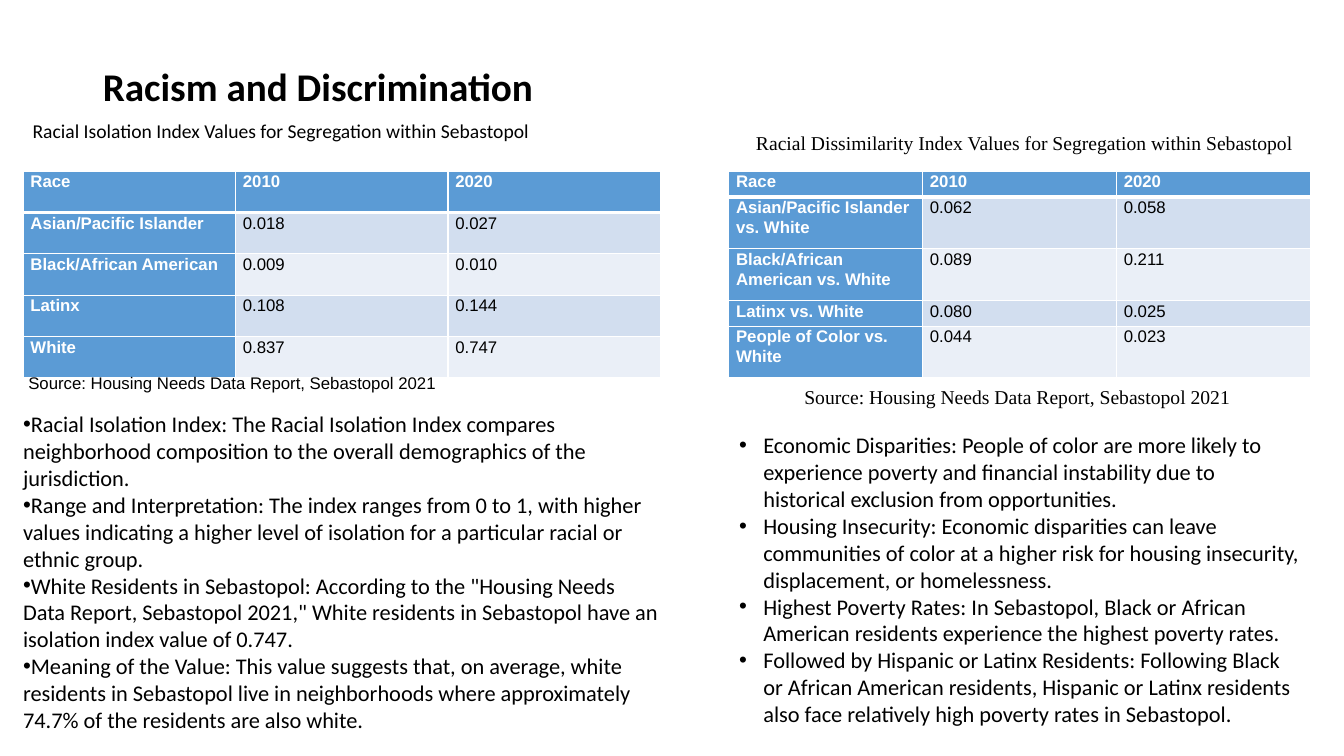
from dataclasses import dataclass

from lxml.etree import SubElement
from pptx import Presentation
from pptx.dml.color import RGBColor
from pptx.enum.text import MSO_ANCHOR as Anchor
from pptx.oxml.ns import qn
from pptx.util import Emu, Pt

EMU_PER_PX = 9525


def px(length):
    return Emu(round(length * EMU_PER_PX))


@dataclass(frozen=True)
class Theme:
    ink: str = "000000"
    paper: str = "FFFFFF"
    header: str = "5B9BD5"
    bands: tuple = ("D2DEEF", "EAEFF7")
    body_font: str = "Calibri"
    table_font: str = "Arial"
    serif_font: str = "Times New Roman"
    title_size: int = 28
    body_size: int = 16
    caption_size: int = 14
    table_size: int = 12


def write(paragraph, text, *, font, size, color, bold=False, line=None, after=0):
    paragraph.space_after = Pt(after)
    if line:
        paragraph.line_spacing = line
    run = paragraph.add_run()
    run.text = text
    run.font.name = font
    run.font.size = Pt(size)
    run.font.bold = bold
    run.font.color.rgb = RGBColor.from_string(color)


def add_bullet(paragraph, hang):
    properties = paragraph._p.get_or_add_pPr()
    properties.set("marL", str(px(hang)))
    properties.set("indent", str(-px(hang)))
    SubElement(properties, qn("a:buFont"), typeface="Arial")
    SubElement(properties, qn("a:buChar"), char="•")


def add_border(cell, side, width, color):
    properties = cell._tc.get_or_add_tcPr()
    border = SubElement(properties, qn(f"a:ln{side}"), w=str(Pt(width)))
    fill = SubElement(border, qn("a:solidFill"))
    SubElement(fill, qn("a:srgbClr"), val=color)


class SlideBuilder:
    def __init__(self, slide, theme):
        self.slide = slide
        self.theme = theme

    def frame(self, left, top, width, height, inset=(10, 5), wrap=True):
        """Add an empty text box and return its text frame."""
        box = self.slide.shapes.add_textbox(px(left), px(top), px(width), px(height))
        frame = box.text_frame
        frame.word_wrap = wrap
        frame.margin_left = frame.margin_right = px(inset[0])
        frame.margin_top = frame.margin_bottom = px(inset[1])
        return frame

    def label(self, text, place, inset=(10, 5), wrap=True, anchor=Anchor.TOP, **style):
        frame = self.frame(*place, inset=inset, wrap=wrap)
        frame.vertical_anchor = anchor
        write(frame.paragraphs[0], text, color=self.theme.ink, **style)

    def bullets(self, points, place, hang, inset=(10, 5)):
        frame = self.frame(*place, inset=inset)
        for index, point in enumerate(points):
            paragraph = frame.add_paragraph() if index else frame.paragraphs[0]
            write(paragraph, point, font=self.theme.body_font,
                  size=self.theme.body_size, color=self.theme.ink)
            add_bullet(paragraph, hang)

    def table(self, rows, place, row_shares, after=0):
        """Add a table whose row heights follow row_shares."""
        left, top, width, height = place
        table = self.slide.shapes.add_table(
            len(rows), len(rows[0]), px(left), px(top), px(width), px(height)).table
        for column in table.columns:
            column.width = px(width / len(rows[0]))
        for r, (values, share) in enumerate(zip(rows, row_shares)):
            table.rows[r].height = px(height * share / sum(row_shares))
            for c, value in enumerate(values):
                self.cell(table.cell(r, c), value, r, c, after)

    def cell(self, cell, value, row, column, after):
        theme = self.theme
        heading = row == 0 or column == 0
        cell.margin_left = cell.margin_right = px(7)
        cell.margin_top = cell.margin_bottom = 0
        for side in "LRTB":
            under_header = (row, side) in ((0, "B"), (1, "T"))
            add_border(cell, side, 3 if under_header else 1, theme.paper)
        cell.fill.solid()
        cell.fill.fore_color.rgb = RGBColor.from_string(
            theme.header if heading else theme.bands[(row - 1) % 2])
        write(cell.text_frame.paragraphs[0], value, font=theme.table_font,
              size=theme.table_size, color=theme.paper if heading else theme.ink,
              bold=heading, line=1.07, after=after)


HEADER = ("Race", "2010", "2020")
SOURCE = "Source: Housing Needs Data Report, Sebastopol 2021"
ISOLATION = (
    HEADER,
    ("Asian/Pacific Islander", "0.018", "0.027"),
    ("Black/African American", "0.009", "0.010"),
    ("Latinx", "0.108", "0.144"),
    ("White", "0.837", "0.747"),
)
DISSIMILARITY = (
    HEADER,
    ("Asian/Pacific Islander vs. White", "0.062", "0.058"),
    ("Black/African American vs. White", "0.089", "0.211"),
    ("Latinx vs. White", "0.080", "0.025"),
    ("People of Color vs. White", "0.044", "0.023"),
)
ISOLATION_POINTS = (
    "Racial Isolation Index: The Racial Isolation Index compares neighborhood "
    "composition to the overall demographics of the jurisdiction.",
    "Range and Interpretation: The index ranges from 0 to 1, with higher values "
    "indicating a higher level of isolation for a particular racial or ethnic group.",
    'White Residents in Sebastopol: According to the "Housing Needs Data Report, '
    'Sebastopol 2021," White residents in Sebastopol have an isolation index value '
    "of 0.747.",
    "Meaning of the Value: This value suggests that, on average, white residents in "
    "Sebastopol live in neighborhoods where approximately 74.7% of the residents are "
    "also white.",
)
DISPARITY_POINTS = (
    "Economic Disparities: People of color are more likely to experience poverty and "
    "financial instability due to historical exclusion from opportunities.",
    "Housing Insecurity: Economic disparities can leave communities of color at a "
    "higher risk for housing insecurity, displacement, or homelessness.",
    "Highest Poverty Rates: In Sebastopol, Black or African American residents "
    "experience the highest poverty rates.",
    "Followed by Hispanic or Latinx Residents: Following Black or African American "
    "residents, Hispanic or Latinx residents also face relatively high poverty rates "
    "in Sebastopol.",
)


def main():
    deck = Presentation()
    deck.slide_width, deck.slide_height = px(1280), px(720)
    theme = Theme()
    page = SlideBuilder(deck.slides.add_slide(deck.slide_layouts[6]), theme)
    serif_caption = dict(font=theme.serif_font, size=theme.caption_size, wrap=False)

    page.label("Racism and Discrimination", (88, 55, 1104, 60), anchor=Anchor.MIDDLE,
               font=theme.body_font, size=theme.title_size, bold=True, line=0.9)

    page.label("Racial Isolation Index Values for Segregation within Sebastopol",
               (21, 111, 631, 34), font=theme.body_font, size=theme.caption_size,
               line=0.9)
    page.table(ISOLATION, (22, 163, 607, 197), (1, 1, 1, 1, 1), after=8)
    page.label(SOURCE, (27, 355, 602, 19), inset=(0, 0),
               font=theme.table_font, size=theme.table_size)
    page.bullets(ISOLATION_POINTS, (22, 391, 607, 312), hang=0, inset=(0, 0))

    page.label("Racial Dissimilarity Index Values for Segregation within Sebastopol",
               (710, 120, 538, 33), **serif_caption)
    page.table(DISSIMILARITY, (694, 163, 554, 197), (1, 2, 2, 1, 2))
    page.label(SOURCE, (756, 360, 429, 34), line=1.07, after=8, **serif_caption)
    page.bullets(DISPARITY_POINTS, (694, 406, 554, 294), hang=23)

    deck.save("out.pptx")


if __name__ == "__main__":
    main()
